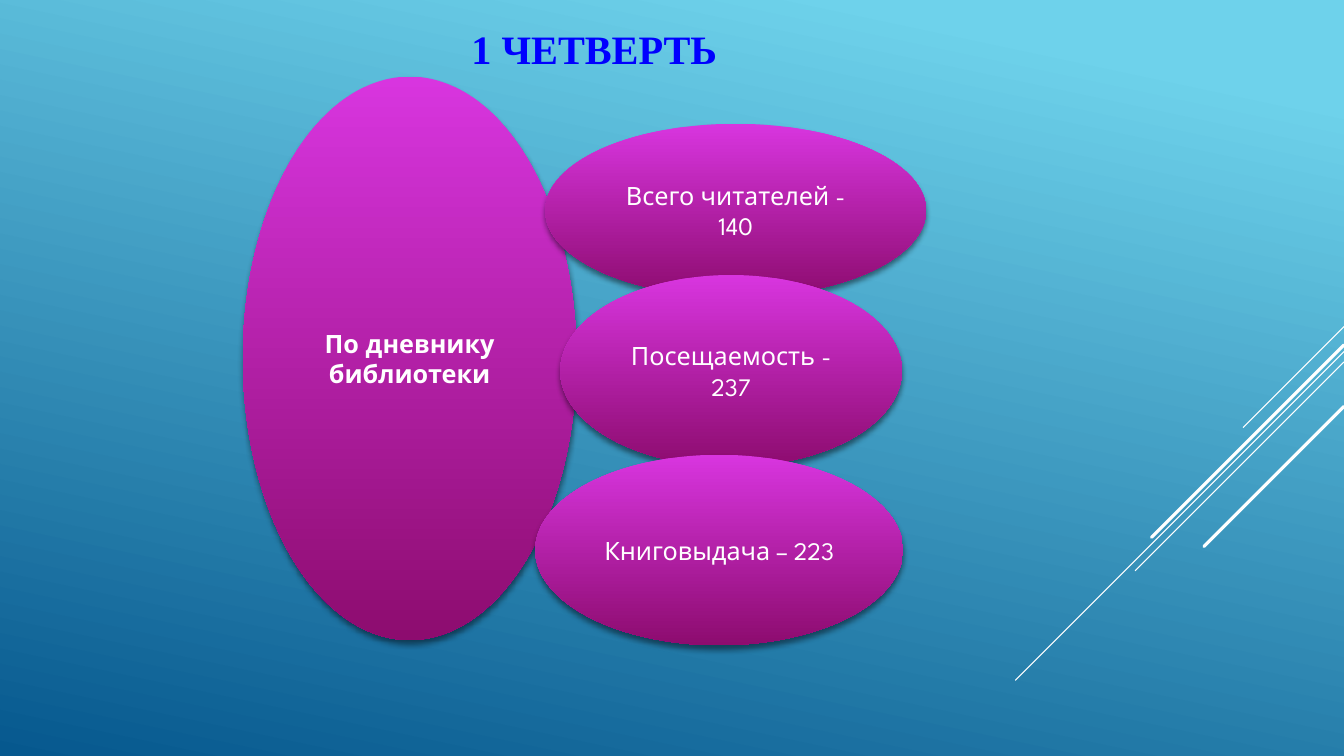
from lxml.etree import SubElement
from pptx import Presentation
from pptx.dml.color import RGBColor as RGB
from pptx.enum.shapes import MSO_CONNECTOR as Link, MSO_SHAPE as Shape
from pptx.enum.text import MSO_ANCHOR as Anchor, PP_ALIGN as Align
from pptx.oxml.ns import qn
from pptx.util import Cm, Pt

WIDTH, HEIGHT = 33.87, 19.05
COLORS = {
    "sky": "6ED2EB", "sea": "06588E", "pink": "D835DF", "plum": "8D0C6F",
    "white": "FFFFFF", "title": "0000FF", "shadow": "000000",
}


class LibrarySlide:
    body_font = "League Spartan"
    title_font = "Times New Roman"

    def __init__(self, slide):
        self.slide = slide

    def color(self, name):
        return RGB.from_string(COLORS[name])

    def gradient(self, fill, stops, angle):
        fill.gradient()
        fill.gradient_angle = 360 - angle
        for stop, (position, name) in zip(fill.gradient_stops, stops):
            stop.position = position
            stop.color.rgb = self.color(name)

    def background(self):
        self.gradient(self.slide.background.fill, [(0.1, "sky"), (1, "sea")], 102)

    def add_text(self, shape, text, font, size, color, bold, align):
        frame = shape.text_frame
        frame.word_wrap = True
        frame.vertical_anchor = Anchor.MIDDLE
        paragraph = frame.paragraphs[0]
        paragraph.alignment = align
        run = paragraph.add_run()
        run.text = text
        run.font.name = font
        run.font.size = Pt(size)
        run.font.bold = bold
        run.font.color.rgb = self.color(color)

    def diagonal(self, top, reach, weight):
        """Draw a 45° line from the right edge down to the left."""
        line = self.slide.shapes.add_connector(
            Link.STRAIGHT, Cm(WIDTH), Cm(top), Cm(WIDTH - reach), Cm(top + reach))
        line.line.color.rgb = self.color("white")
        line.line.width = Pt(weight)
        properties = line._element.spPr
        properties.find(qn("a:ln")).set("cap", "rnd")
        SubElement(properties, qn("a:effectLst"))

    def oval(self, kind, box, text, bold=False):
        oval = self.slide.shapes.add_shape(kind, *map(Cm, box))
        self.gradient(oval.fill, [(0, "pink"), (1, "plum")], 90)
        oval.line.fill.background()
        self.drop_shadow(oval)
        self.add_text(oval, text, self.body_font, 18, "white", bold, Align.CENTER)

    def drop_shadow(self, shape):
        shape.shadow.inherit = False
        effects = shape._element.spPr.find(qn("a:effectLst"))
        shadow = SubElement(effects, qn("a:outerShdw"), blurRad=str(Pt(4)),
                            dist=str(Pt(3)), dir="5400000", rotWithShape="0")
        tone = SubElement(shadow, qn("a:srgbClr"), val=COLORS["shadow"])
        SubElement(tone, qn("a:alpha"), val="46000")

    def title(self, box, text):
        title = self.slide.shapes.add_textbox(*map(Cm, box))
        self.add_text(title, text, self.title_font, 28.8, "title", True, Align.LEFT)


def main():
    deck = Presentation()
    deck.slide_width, deck.slide_height = Cm(WIDTH), Cm(HEIGHT)
    page = LibrarySlide(deck.slides.add_slide(deck.slide_layouts[6]))
    page.background()

    # Diagonal lines: top, reach, weight
    for top, reach, weight in [
        (8.23, 2.54, 0.75), (8.86, 8.28, 0.75), (9.12, 5.26, 0.75),
        (8.69, 4.85, 2.25), (10.24, 3.53, 2.25),
    ]:
        page.diagonal(top, reach, weight)

    # Source of the figures
    page.oval(Shape.OVAL, (6.12, 1.93, 8.41, 14.2), "По дневнику библиотеки", bold=True)

    # Figures of the term
    for box, figure in [
        ((13.74, 3.12, 9.6, 4.37), "Всего читателей - 140"),
        ((14.12, 6.93, 8.61, 4.83), "Посещаемость - 237"),
        ((13.49, 11.46, 9.27, 4.8), "Книговыдача – 223"),
    ]:
        page.oval(Shape.FLOWCHART_CONNECTOR, box, figure)

    # Heading
    page.title((11.63, 0.53, 21.56, 1.37), "1 ЧЕТВЕРТЬ")

    deck.save("out.pptx")


if __name__ == "__main__":
    main()
